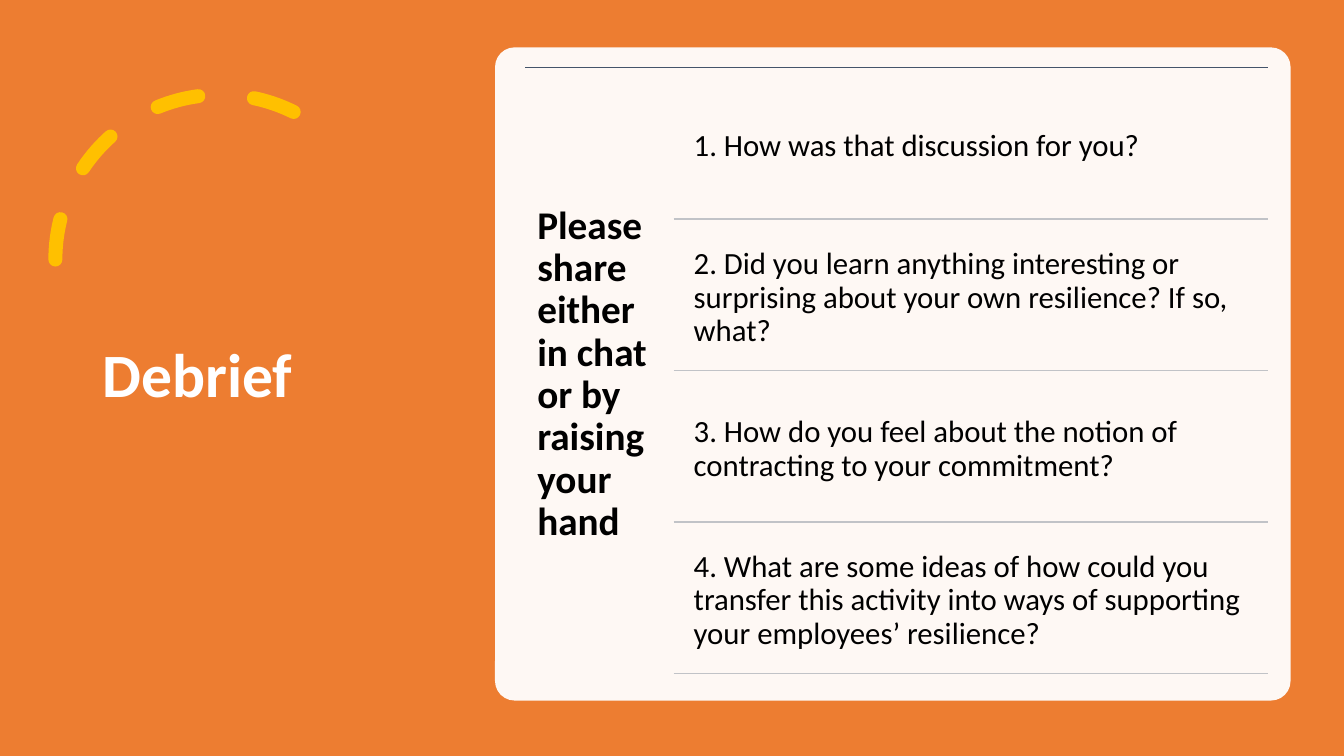
from dataclasses import dataclass

import pptx
import pptx.dml.color
import pptx.enum.dml
import pptx.enum.shapes
import pptx.enum.text
import pptx.oxml.ns
import pptx.util
from lxml import etree

Inches = pptx.util.Inches
Shapes = pptx.enum.shapes.MSO_SHAPE


@dataclass(frozen=True)
class Theme:
    """Colours, font and type sizes of the slide."""
    font: str = "Calibri"
    background: str = "ED7D31"
    accent: str = "FFC000"
    white: str = "FFFFFF"
    text: str = "000000"
    top_rule: str = "44546A"
    divider: str = "C1C3C7"
    title_size: int = 44
    prompt_size: int = 28
    question_size: int = 22


THEME = Theme()
PROMPT = "Please share either in chat or by raising your hand"
QUESTIONS = [
    "1. How was that discussion for you?",
    "2. Did you learn anything interesting or surprising about your own resilience? If so, what?",
    "3. How do you feel about the notion of contracting to your commitment?",
    "4. What are some ideas of how could you transfer this activity into ways of supporting "
    "your employees’ resilience?",
]
LIST_TOP, LIST_BOTTOM = 0.67, 6.68
LIST_LEFT, QUESTION_LEFT, LIST_RIGHT = 5.21, 6.68, 12.58


def rgb(value):
    """Return the colour for a hexadecimal string."""
    return pptx.dml.color.RGBColor.from_string(value)


def add_panel(slide, preset, box, color, opacity=100):
    """Add a filled shape without outline, optionally translucent."""
    shape = slide.shapes.add_shape(preset, *map(Inches, box))
    shape.shadow.inherit = False
    shape.line.fill.background()
    shape.fill.solid()
    shape.fill.fore_color.rgb = rgb(color)
    if opacity < 100:
        color_element = shape._element.spPr.find(".//" + pptx.oxml.ns.qn("a:srgbClr"))
        alpha = etree.SubElement(color_element, pptx.oxml.ns.qn("a:alpha"))
        alpha.set("val", str(opacity * 1000))
    return shape


def add_dashed_arc(slide, box):
    """Add the mirrored arc with thick, round-capped dashes."""
    arc = slide.shapes.add_shape(Shapes.ARC, *map(Inches, box))
    arc.shadow.inherit = False
    arc.adjustments[0] = 146.13
    arc.adjustments[1] = 0
    arc.fill.background()
    arc.line.color.rgb = rgb(THEME.accent)
    arc.line.width = pptx.util.Pt(10)
    arc.line.dash_style = pptx.enum.dml.MSO_LINE.DASH
    properties = arc._element.spPr
    properties.find(pptx.oxml.ns.qn("a:ln")).set("cap", "rnd")
    properties.find(pptx.oxml.ns.qn("a:xfrm")).set("flipH", "1")


def add_rule(slide, left, top, color):
    """Add a thin horizontal line that ends at the list's right edge."""
    rule = slide.shapes.add_connector(
        pptx.enum.shapes.MSO_CONNECTOR.STRAIGHT,
        Inches(left), Inches(top), Inches(LIST_RIGHT), Inches(top))
    rule.line.color.rgb = rgb(color)
    rule.line.width = pptx.util.Pt(1)
    etree.SubElement(rule._element.spPr, pptx.oxml.ns.qn("a:effectLst"))


def add_text(slide, box, text, size, color=THEME.text, bold=False, inset=0.1):
    """Add a wrapped, vertically centred text box."""
    frame = slide.shapes.add_textbox(*map(Inches, box)).text_frame
    frame.word_wrap = True
    frame.vertical_anchor = pptx.enum.text.MSO_ANCHOR.MIDDLE
    frame.margin_left = frame.margin_right = Inches(inset)
    frame.margin_top = frame.margin_bottom = Inches(inset)
    frame.text = text
    paragraph = frame.paragraphs[0]
    paragraph.line_spacing = 0.9
    font = paragraph.runs[0].font
    font.name = THEME.font
    font.size = pptx.util.Pt(size)
    font.bold = bold
    font.color.rgb = rgb(color)


def add_questions(slide):
    """Add the evenly spaced questions, each closed by a divider."""
    pitch = (LIST_BOTTOM - LIST_TOP) / len(QUESTIONS)
    for index, question in enumerate(QUESTIONS):
        top = LIST_TOP + index * pitch
        add_text(slide, (6.79, top + 0.07, 5.78, 1.43), question,
                 THEME.question_size, inset=0.09)
        add_rule(slide, QUESTION_LEFT, top + pitch, THEME.divider)


def main():
    """Build and save the debrief slide."""
    presentation = pptx.Presentation()
    presentation.slide_width = Inches(13.33)
    presentation.slide_height = Inches(7.5)
    slide = presentation.slides.add_slide(presentation.slide_layouts[6])

    add_panel(slide, Shapes.RECTANGLE, (0, 0, 13.33, 7.5), THEME.background)
    add_dashed_arc(slide, (0.55, 0.94, 3.27, 3.27))
    add_text(slide, (0.92, 0.7, 3.23, 6.09), "Debrief", THEME.title_size, THEME.white, bold=True)
    card = add_panel(slide, Shapes.ROUNDED_RECTANGLE, (4.91, 0.47, 7.89, 6.48), THEME.white, 95)
    card.adjustments[0] = 0.03
    add_rule(slide, LIST_LEFT, LIST_TOP, THEME.top_rule)
    add_text(slide, (LIST_LEFT, LIST_TOP, 1.47, 6.09), PROMPT, THEME.prompt_size,
             bold=True, inset=0.12)
    add_questions(slide)
    presentation.save("out.pptx")


if __name__ == "__main__":
    main()
